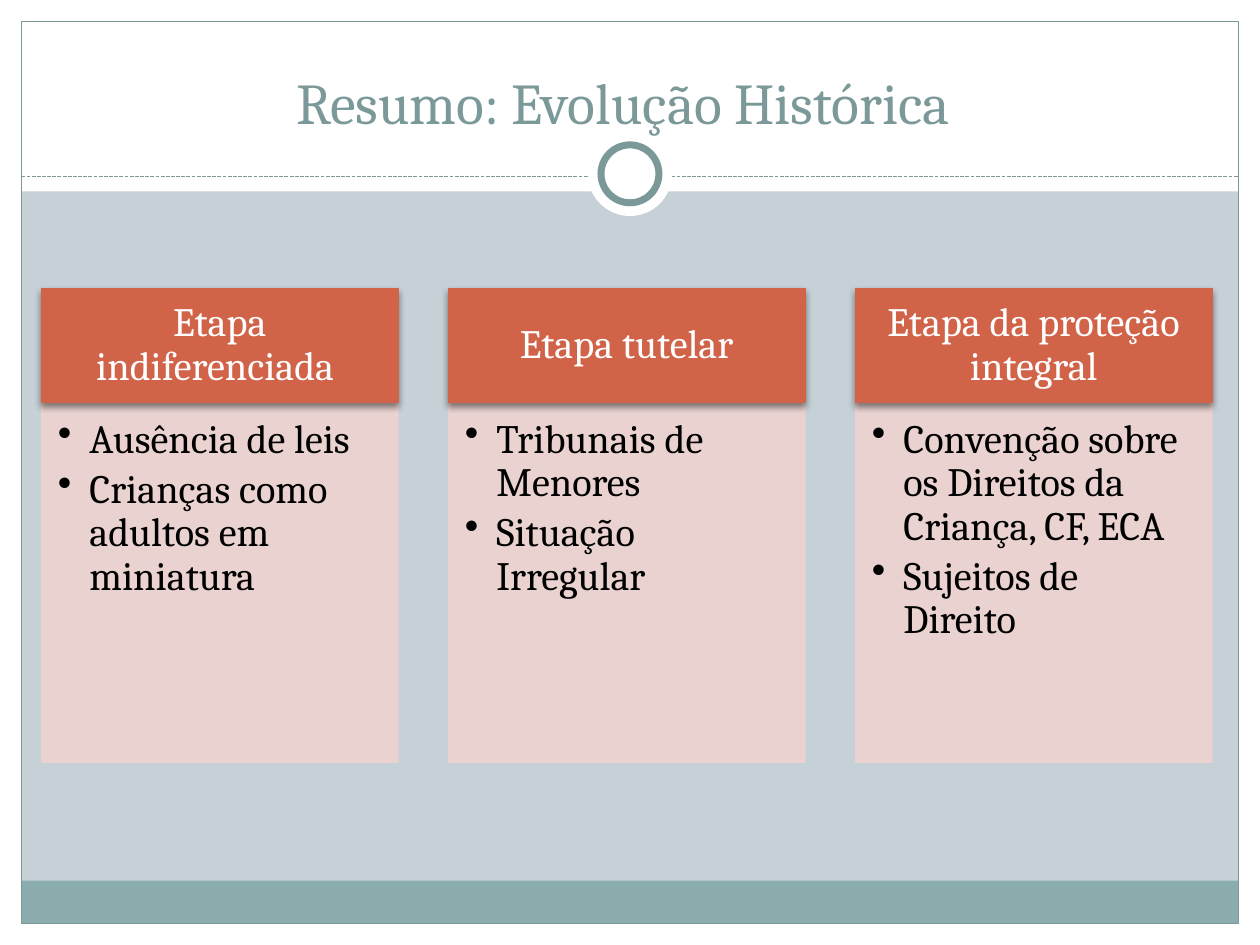
from lxml import etree
from pptx import Presentation, util as u
from pptx.dml.color import RGBColor
from pptx.enum import dml, shapes, text
from pptx.oxml import parse_xml
from pptx.oxml.ns import qn

HUES = {"back": "C5D1D7", "white": "FFFFFF", "teal": "7C999A", "foot": "8CADAE",
        "head": "D16349", "body": "EED3D0", "ink": "000000"}
FONT = "Cambria"
WIDE, HIGH = 10, 7.5
EDGE = 0.17
STAGES = [
    ("Etapa indiferenciada ",
     ["Ausência de leis", "Crianças como adultos em miniatura"]),
    ("Etapa tutelar", ["Tribunais de Menores", "Situação Irregular"]),
    ("Etapa da proteção integral",
     ["Convenção sobre os Direitos da Criança, CF, ECA", "Sujeitos de Direito"]),
]
SHADE = """<a:effectLst xmlns:a="http://schemas.openxmlformats.org/drawingml/2006/main">
<a:outerShdw blurRad="50800" dist="25400" dir="5400000" rotWithShape="0">
<a:srgbClr val="000000"><a:alpha val="45000"/></a:srgbClr>
</a:outerShdw></a:effectLst>"""


def hue(name):
    """Return the named colour."""
    return RGBColor.from_string(HUES[name])


def shape(slide, box, fill=None, line=None, width=0.75, kind="RECTANGLE"):
    """Add a flat shape in the given box."""
    item = slide.shapes.add_shape(getattr(shapes.MSO_SHAPE, kind), *map(u.Inches, box))
    item.shadow.inherit = False
    if fill:
        item.fill.solid()
        item.fill.fore_color.rgb = hue(fill)
    else:
        item.fill.background()
    if line:
        item.line.color.rgb = hue(line)
        item.line.width = u.Pt(width)
    else:
        item.line.fill.background()
    return item


def write(item, lines, size, color, inset, anchor, align):
    """Fill a shape with styled paragraphs and return them."""
    frame = item.text_frame
    frame.word_wrap = True
    frame.vertical_anchor = anchor
    (frame.margin_left, frame.margin_top,
     frame.margin_right, frame.margin_bottom) = map(u.Inches, inset)
    frame.text = "\n".join(lines)
    for para in frame.paragraphs:
        para.alignment = align
        for run in para.runs:
            run.font.name = FONT
            run.font.size = u.Pt(size)
            run.font.color.rgb = hue(color)
    return frame.paragraphs


def fade(item, share):
    """Make the fill and line of a shape partly clear."""
    for tint in item._element.spPr.iter(qn("a:srgbClr")):
        etree.SubElement(tint, qn("a:alpha")).set("val", str(int(share * 1000)))


def bullet(para):
    """Give a paragraph a hanging round bullet."""
    props = para._p.get_or_add_pPr()
    props.set("marL", str(u.Inches(0.25)))
    props.set("indent", str(u.Inches(-0.25)))
    etree.SubElement(props, qn("a:buChar")).set("char", "•")


def frame(slide, wide, high):
    """Draw the white margins, the foot band and the border."""
    top = 1.52
    for box in [(0, high - EDGE, wide, EDGE), (0, 0, wide, top),
                (0, 0, EDGE, high), (wide - EDGE, 0, EDGE, high)]:
        shape(slide, box, "white")
    inner = wide - 2 * EDGE
    shape(slide, (EDGE, 6.99, inner, 0.34), "foot")
    shape(slide, (EDGE, EDGE, inner, high - 2 * EDGE), line="teal")


def rule(slide, wide, y):
    """Draw the dashed rule with a ring at its middle."""
    ends = map(u.Inches, (EDGE, y, wide - EDGE, y))
    line = slide.shapes.add_connector(shapes.MSO_CONNECTOR.STRAIGHT, *ends)
    line.line.color.rgb = hue("teal")
    line.line.width = u.Pt(0.75)
    line.line.dash_style = dml.MSO_LINE.SQUARE_DOT
    etree.SubElement(line._element.spPr, qn("a:effectLst"))
    mid = y - 0.02
    for size, edge in [(0.67, None), (0.46, "teal")]:
        box = (wide / 2 - size / 2, mid - size / 2, size, size)
        shape(slide, box, "white", edge, 4, "OVAL")


def title(slide, box, words):
    """Place the slide title."""
    item = slide.shapes.add_textbox(*map(u.Inches, box))
    write(item, [words], 33, "teal", (0.1, 0, 0.1, 0),
          text.MSO_ANCHOR.BOTTOM, text.PP_ALIGN.CENTER)


def stage(slide, box, name, points):
    """Draw one column: a heading over its bullet list."""
    x, y, wide, high = box
    cap = high * 0.24
    body = shape(slide, (x, y + cap, wide, high - cap), "body", "body")
    head = shape(slide, (x, y, wide, cap), "head", "head")
    fade(body, 90)
    props = head._element.spPr
    props.replace(props.find(qn("a:effectLst")), parse_xml(SHADE))
    lines = write(head, [name], 23, "white", (0.18, 0.1, 0.18, 0.1),
                  text.MSO_ANCHOR.MIDDLE, text.PP_ALIGN.CENTER)
    lines[0].line_spacing = 0.9
    for para in write(body, points, 23, "ink", (0.13, 0.13, 0.18, 0.2),
                      text.MSO_ANCHOR.TOP, text.PP_ALIGN.LEFT):
        para.line_spacing = 0.9
        para.space_after = u.Pt(3.7)
        bullet(para)


def stages(slide, box, items):
    """Lay the columns out side by side."""
    x, y, wide, high = box
    col = 2.83
    step = (wide - col) / (len(items) - 1)
    for i, (name, points) in enumerate(items):
        stage(slide, (x + i * step, y, col, high), name, points)


def main():
    """Build and save the slide."""
    deck = Presentation()
    deck.slide_width, deck.slide_height = u.Inches(WIDE), u.Inches(HIGH)
    slide = deck.slides.add_slide(deck.slide_layouts[6])
    slide.background.fill.solid()
    slide.background.fill.fore_color.rgb = hue("back")
    frame(slide, WIDE, HIGH)
    rule(slide, WIDE, 1.4)
    title(slide, (0.33, 0.25, 9.33, 0.83), "Resumo: Evolução Histórica ")
    stages(slide, (0.33, 2.29, 9.29, 3.76), STAGES)
    deck.save("out.pptx")


if __name__ == "__main__":
    main()
